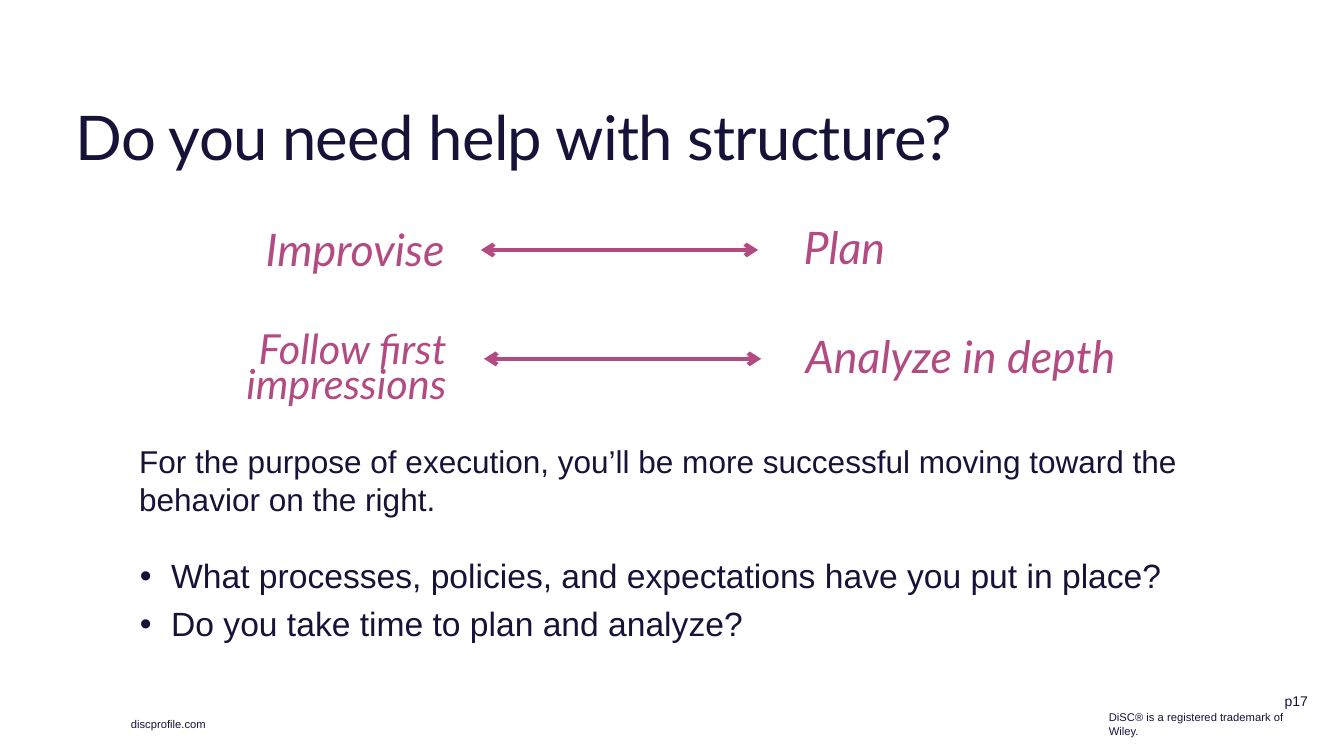
from lxml import etree
from pptx import Presentation
from pptx.dml.color import RGBColor
from pptx.enum import shapes, text
from pptx.oxml.ns import qn
from pptx.util import Inches, Pt

NAVY = RGBColor(0x17, 0x12, 0x38)
PINK = RGBColor(0xB3, 0x4B, 0x83)
LEFT, RIGHT = text.PP_ALIGN.LEFT, text.PP_ALIGN.RIGHT
TOP, MIDDLE, BOTTOM = (text.MSO_ANCHOR.TOP, text.MSO_ANCHOR.MIDDLE,
                       text.MSO_ANCHOR.BOTTOM)

prs = Presentation()
prs.slide_width, prs.slide_height = Inches(13.33), Inches(7.5)
slide = prs.slides.add_slide(prs.slide_layouts[6])


def add_text(box, lines, size, font="Arial", color=NAVY, align=LEFT,
             anchor=TOP, spacing=None, inset=0.1, italic=False):
    """Add a wrapped text box with one paragraph per line; return its frame."""
    tf = slide.shapes.add_textbox(*[Inches(v) for v in box]).text_frame
    tf.word_wrap = True
    tf.vertical_anchor = anchor
    tf.margin_left = tf.margin_right = Inches(inset)
    tf.text = "\n".join(lines)
    for p in tf.paragraphs:
        p.alignment = align
        p.line_spacing = spacing
        for r in p.runs:
            r.font.name = font
            r.font.size = Pt(size)
            r.font.italic = italic
            r.font.color.rgb = color
    return tf


# Footer
add_text((10.9, 7.07, 2.24, 0.23), ["DiSC® is a registered trademark of Wiley."],
         8, anchor=MIDDLE)
add_text((1.2, 7.07, 0.98, 0.23), ["discprofile.com"], 8, anchor=MIDDLE)
add_text((12.62, 6.82, 0.45, 0.27), ["p17"], 10, align=RIGHT, anchor=MIDDLE)

# Title
title = add_text((0.65, 0.89, 11.72, 0.88), ["Do you need help with structure?"],
                 44, font="Lato", anchor=BOTTOM, spacing=0.85)
title.paragraphs[0].runs[0].font._element.set("spc", "-50")

# Body
add_text((1.38, 4.34, 10.78, 0.88),
         ["For the purpose of execution, you’ll be more successful moving "
          "toward the behavior on the right."], 22.5, inset=0)

questions = add_text(
    (1.29, 5.46, 10.87, 0.99),
    ["What processes, policies, and expectations have you put in place?",
     "Do you take time to plan and analyze?"], 24)
for p in questions.paragraphs:
    p.space_after = Pt(5.5)
    pPr = p._p.get_or_add_pPr()
    pPr.set("marL", str(Inches(0.31)))
    pPr.set("indent", str(-Inches(0.31)))
    etree.SubElement(pPr, qn("a:buFont")).set("typeface", "Arial")
    etree.SubElement(pPr, qn("a:buChar")).set("char", "•")

# Opposite behaviors: left word, its top, right edge, size, spacing;
# arrow start and height; right word, its left and top
behaviors = [
    ("Improvise", 2.21, 4.41, 32, 0.9, 4.77, 2.48, "Plan", 7.97, 2.19),
    ("Follow first impressions", 3.29, 4.43, 29.6, 0.7, 4.8, 3.56,
     "Analyze in depth", 7.99, 3.27),
]
for (start, start_top, start_right, size, spacing, arrow_x, arrow_y,
     goal, goal_left, goal_top) in behaviors:
    add_text((start_right - 3.38, start_top, 3.38, 0.88), [start], size,
             font="Lato", color=PINK, align=RIGHT, spacing=spacing, inset=0,
             italic=True)
    add_text((goal_left, goal_top, 3.38, 0.88), [goal], 32, font="Lato",
             color=PINK, spacing=0.9, inset=0, italic=True)
    arrow = slide.shapes.add_connector(
        shapes.MSO_CONNECTOR.STRAIGHT, Inches(arrow_x), Inches(arrow_y),
        Inches(arrow_x + 2.75), Inches(arrow_y))
    arrow.line.color.rgb = PINK
    arrow.line.width = Pt(3)
    ln = arrow.line._get_or_add_ln()
    for end in ("a:headEnd", "a:tailEnd"):
        etree.SubElement(ln, qn(end)).set("type", "arrow")
    etree.SubElement(arrow._element.spPr, qn("a:effectLst"))

prs.save("out.pptx")
